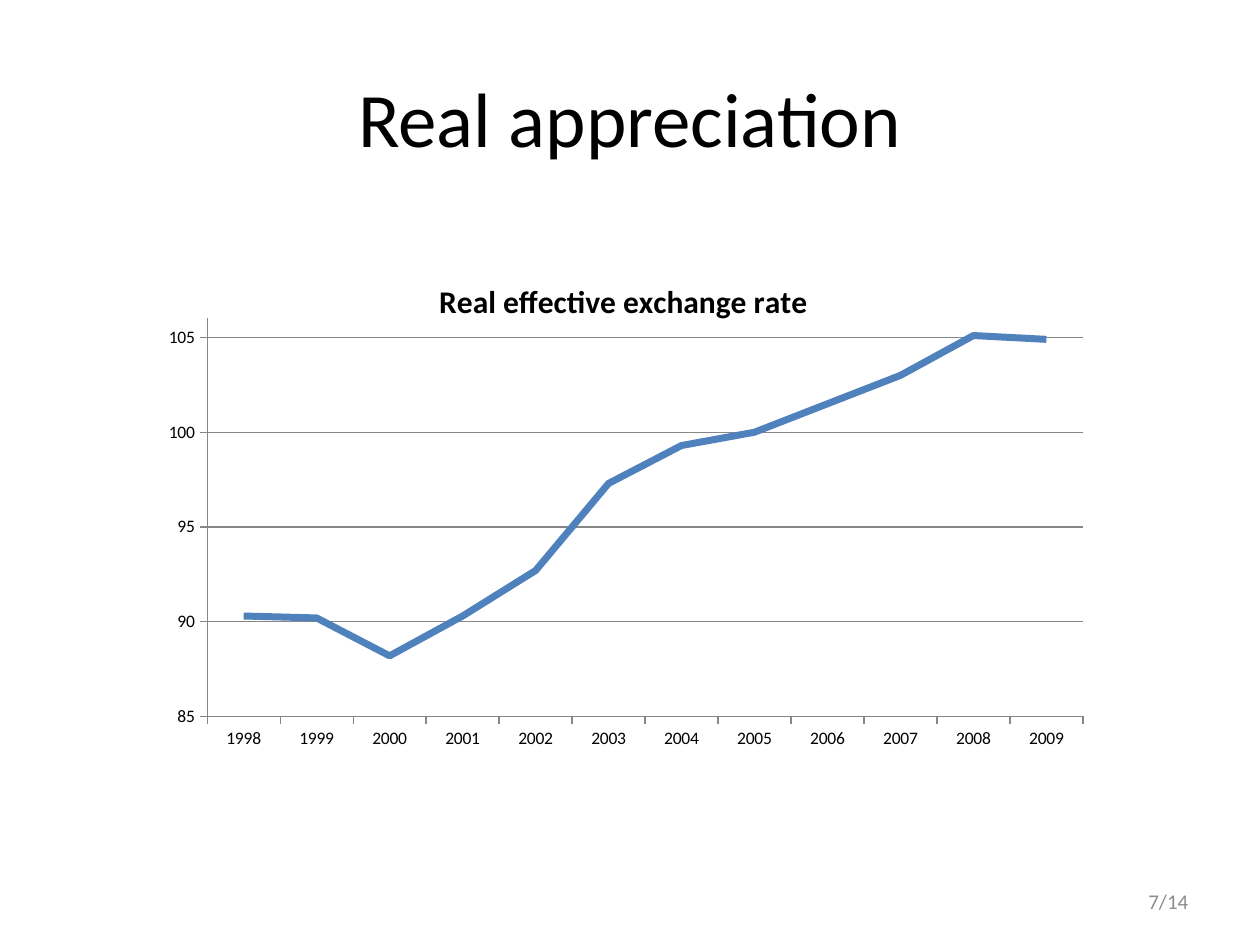
from dataclasses import dataclass

from lxml import etree
from pptx import Presentation
from pptx import util as u
from pptx.chart.data import CategoryChartData
from pptx.dml.color import RGBColor
from pptx.enum import chart as charts, text
from pptx.oxml.ns import qn


@dataclass(frozen=True)
class Theme:
    font: str = "Calibri"
    ink: str = "000000"
    muted: str = "8C8C8C"
    rule: str = "868686"
    accent: str = "4F81BD"
    title_size: float = 44
    chart_title_size: float = 18
    chart_size: float = 10
    footer_size: float = 12
    rule_width: float = 0.75
    series_width: float = 4


RATE_NAME = "Real effective exchange rate"
YEARS = [str(year) for year in range(1998, 2010)]
RATES = [90.3, 90.2, 88.2, 90.3, 92.7, 97.3, 99.3, 100, 101.5, 103, 105.1, 104.9]


class SlideBuilder:
    """Places elements by inches on a 10 by 7.5 grid of one-inch cells."""

    def __init__(self, theme):
        self.theme = theme
        self.presentation = Presentation()
        self.presentation.slide_width = u.Inches(10)
        self.presentation.slide_height = u.Inches(7.5)
        self.column = self.presentation.slide_width / 10
        self.row = self.presentation.slide_height / 7.5
        self.slide = self.presentation.slides.add_slide(self.presentation.slide_layouts[5])

    def box(self, left, top, width, height):
        return (u.Emu(round(left * self.column)), u.Emu(round(top * self.row)),
                u.Emu(round(width * self.column)), u.Emu(round(height * self.row)))

    def style_font(self, font, size, color, bold=False):
        font.name, font.size, font.bold = self.theme.font, u.Pt(size), bold
        font.color.rgb = RGBColor.from_string(color)

    def style_line(self, line, width, color):
        line.width = u.Pt(width)
        line.color.rgb = RGBColor.from_string(color)

    def fill_text(self, shape, words, size, color, align):
        frame = shape.text_frame
        frame.text = words
        frame.word_wrap = True
        frame.vertical_anchor = text.MSO_ANCHOR.MIDDLE
        paragraph = frame.paragraphs[0]
        paragraph.alignment = align
        self.style_font(paragraph.runs[0].font, size, color)

    def title(self, words, *area):
        shape = self.slide.shapes.title
        shape.left, shape.top, shape.width, shape.height = self.box(*area)
        self.fill_text(shape, words, self.theme.title_size, self.theme.ink,
                       text.PP_ALIGN.CENTER)

    def page_number(self, words, *area):
        shape = self.slide.shapes.add_textbox(*self.box(*area))
        self.fill_text(shape, words, self.theme.footer_size, self.theme.muted,
                       text.PP_ALIGN.RIGHT)

    def line_chart(self, name, categories, values, *area):
        data = CategoryChartData()
        data.categories = categories
        data.add_series(name, values)
        chart = self.slide.shapes.add_chart(
            charts.XL_CHART_TYPE.LINE, *self.box(*area), data).chart
        self.style_font(chart.font, self.theme.chart_size, self.theme.ink)
        chart.has_legend = False
        chart.has_title = True
        chart.chart_title.include_in_layout = False
        frame = chart.chart_title.text_frame
        frame.text = name
        self.style_font(frame.paragraphs[0].runs[0].font,
                        self.theme.chart_title_size, self.theme.ink, bold=True)

        plot = chart.plots[0]
        plot.vary_by_categories = False
        series = plot.series[0]
        series.smooth = False
        series.marker.style = charts.XL_MARKER_STYLE.NONE
        self.style_line(series.format.line, self.theme.series_width, self.theme.accent)
        for axis in (chart.category_axis, chart.value_axis):
            axis.major_tick_mark = charts.XL_TICK_MARK.OUTSIDE
            self.style_line(axis.format.line, self.theme.rule_width, self.theme.rule)
        return chart

    def value_scale(self, axis, low, high, step):
        axis.minimum_scale, axis.maximum_scale, axis.major_unit = low, high, step
        axis.has_major_gridlines = True
        self.style_line(axis.major_gridlines.format.line,
                        self.theme.rule_width, self.theme.rule)
        axis.tick_labels.number_format = "0"
        axis.tick_labels.number_format_is_linked = False

    def place_in_chart(self, parent, **settings):
        """Write a manual layout, in shares of the chart, into a title or plot area."""
        layout = parent.find(qn("c:layout"))
        if layout is None:
            layout = etree.Element(qn("c:layout"))
            rich_text = parent.find(qn("c:tx"))
            parent.insert(0 if rich_text is None else 1, layout)
        for child in list(layout):
            layout.remove(child)
        manual = etree.SubElement(layout, qn("c:manualLayout"))
        for key, value in settings.items():
            etree.SubElement(manual, qn(f"c:{key}")).set("val", str(value))

    def save(self):
        self.presentation.save("out.pptx")


def main():
    builder = SlideBuilder(Theme())
    builder.title("Real appreciation", 0.5, 0.3, 9, 1.25)
    chart = builder.line_chart(RATE_NAME, YEARS, RATES, 1.02, 1.95, 7.81, 4.45)
    builder.value_scale(chart.value_axis, 85, 106, 5)
    builder.place_in_chart(chart.chart_title._element,
                           xMode="edge", yMode="edge", x=0.31, y=0.05)
    builder.place_in_chart(chart._chartSpace.chart.plotArea, layoutTarget="inner",
                           xMode="edge", yMode="edge", x=0.08, y=0.13, w=0.89, h=0.71)
    builder.page_number("7/14", 7.2, 6.95, 2.33, 0.4)
    builder.save()


if __name__ == "__main__":
    main()
